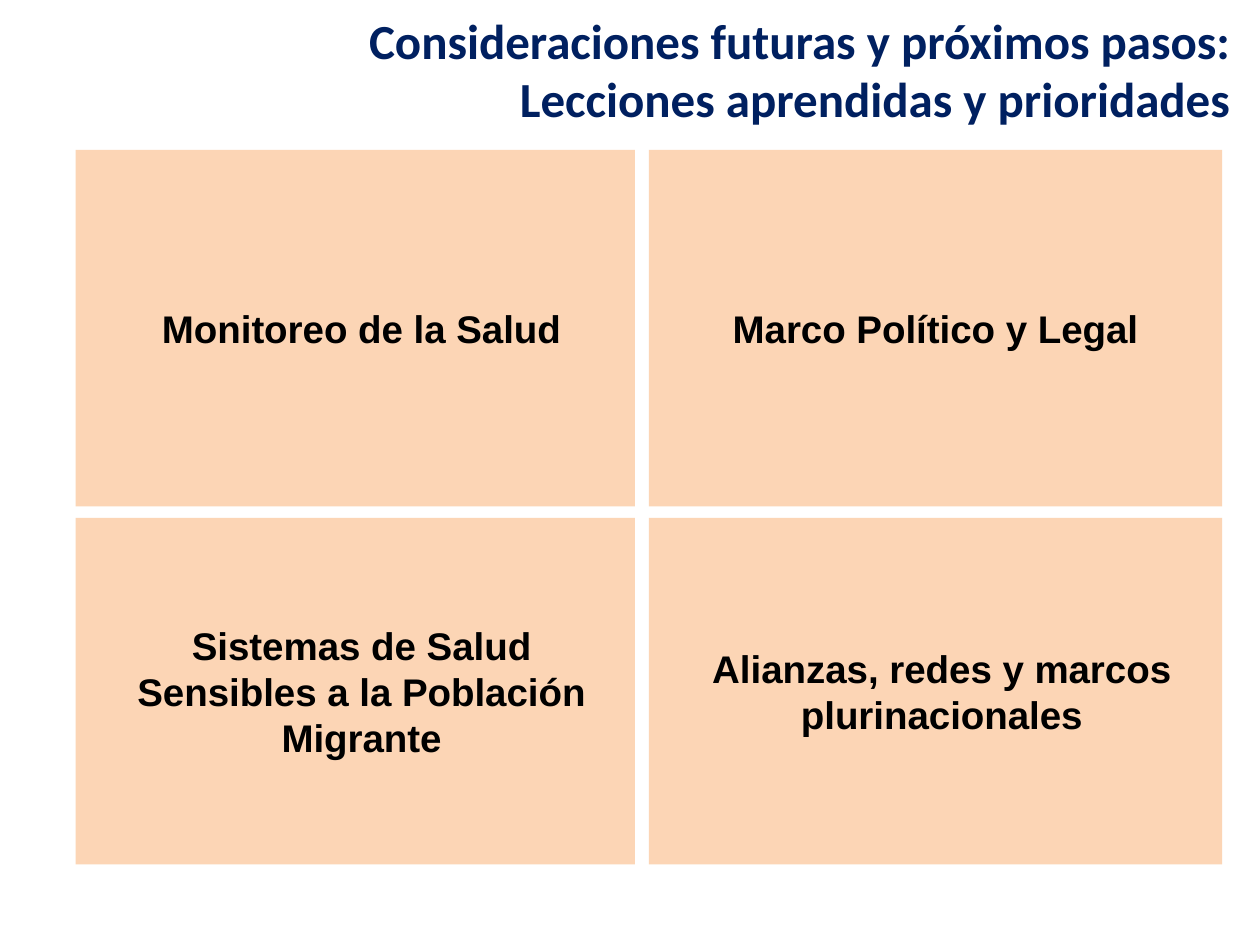
import pptx
import pptx.util
import pptx.dml.color
import pptx.enum.shapes
import pptx.enum.text

Inches, Pt = pptx.util.Inches, pptx.util.Pt
ALIGN = pptx.enum.text.PP_ALIGN
ANCHOR = pptx.enum.text.MSO_ANCHOR

# Content
TITLE = ["Consideraciones futuras y próximos pasos:",
         "Lecciones aprendidas y prioridades"]
# Rows of (text, left indent)
TOPICS = [
    [("Monitoreo de la Salud", 0.1), ("Marco Político y Legal", 0)],
    [("Sistemas de Salud Sensibles a la Población Migrante", 0.1),
     ("Alianzas, redes y marcos plurinacionales", 0.1)],
]
COLORS = {"title": "002060", "panel": "FCD5B5", "text": "000000"}

# Grid: (start, size) of each column and row
COLS = [(0.6, 4.44), (5.15, 4.55)]
ROWS = [(1.19, 2.83), (4.11, 2.75)]


def color(name):
    return pptx.dml.color.RGBColor.from_string(COLORS[name])


def style(para, face, size, hue, align):
    para.alignment = align
    font = para.font
    font.name, font.size, font.bold = face, Pt(size), True
    font.color.rgb = color(hue)


def add_title(slide):
    title = slide.shapes.title
    title.left, title.top = Inches(-0.53), Inches(0.03)
    title.width, title.height = Inches(10.39), Inches(0.53)
    frame = title.text_frame
    frame.word_wrap = True
    frame.auto_size = pptx.enum.text.MSO_AUTO_SIZE.NONE
    frame.vertical_anchor = ANCHOR.TOP
    frame.text = "\n".join(TITLE)
    for para in frame.paragraphs:
        para.space_before = Pt(0)
        style(para, "Calibri", 28, "title", ALIGN.RIGHT)


def add_panel(slide, col, row, text, indent):
    (left, width), (top, height) = col, row
    panel = slide.shapes.add_shape(
        pptx.enum.shapes.MSO_SHAPE.RECTANGLE,
        Inches(left), Inches(top), Inches(width), Inches(height))
    panel.shadow.inherit = False
    panel.fill.solid()
    panel.fill.fore_color.rgb = color("panel")
    panel.line.fill.background()
    frame = panel.text_frame
    frame.word_wrap = True
    frame.vertical_anchor = ANCHOR.MIDDLE
    frame.text = text
    para = frame.paragraphs[0]
    style(para, "Arial", 22, "text", ALIGN.CENTER)
    if indent:
        props = para._p.get_or_add_pPr()
        props.set("marL", str(Inches(indent)))
        props.set("indent", "0")


def main():
    deck = pptx.Presentation()
    deck.slide_width, deck.slide_height = Inches(10), Inches(7.5)
    slide = deck.slides.add_slide(deck.slide_layouts[5])
    add_title(slide)
    # Two by two panels
    for row, topics in zip(ROWS, TOPICS):
        for col, (text, indent) in zip(COLS, topics):
            add_panel(slide, col, row, text, indent)
    deck.save("out.pptx")


if __name__ == "__main__":
    main()
